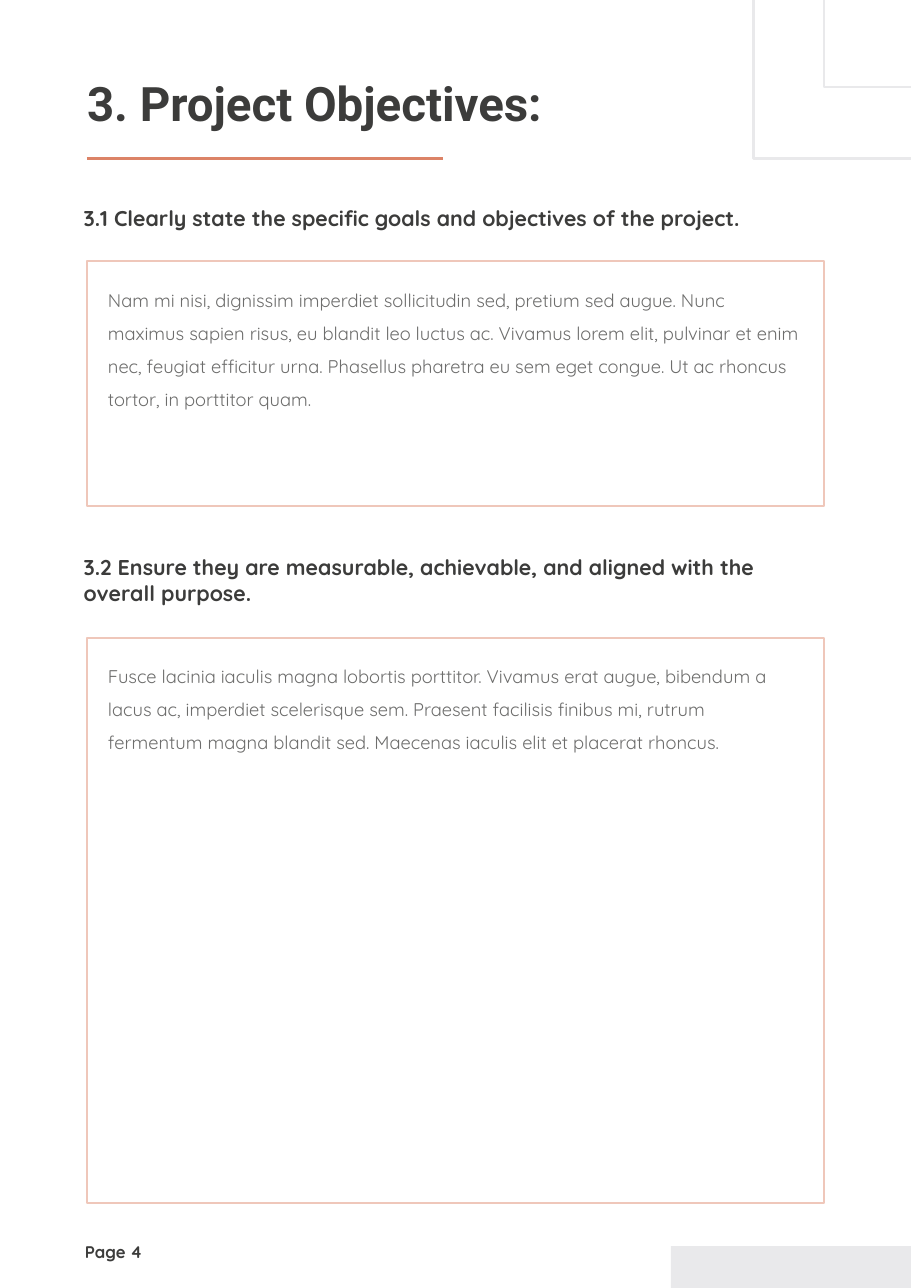
import pptx
import pptx.dml.color
import pptx.enum.shapes
import pptx.enum.text
import pptx.oxml
import pptx.oxml.ns
import pptx.util

EMU_PER_PX = 9144
INK, GREY, CORAL, BLUSH, MIST = "3C3C3B", "6D6D6C", "DC8367", "EFC7BA", "E9E9EB"


def px(length):
    return pptx.util.Emu(length * EMU_PER_PX)


def colour(value):
    return pptx.dml.color.RGBColor.from_string(value)


class ReportPage:
    """Draws styled elements on one report page, with lengths in px."""

    body_font = "Quicksand"
    title_font = "Roboto"

    def __init__(self, deck):
        self.page = deck.slides.add_slide(deck.slide_layouts[5])
        self.shapes = self.page.shapes

    def fill_text(self, box, lines, size, ink=INK, bold=True, font=body_font, spacing=1.0):
        frame = box.text_frame
        frame.word_wrap = True
        frame.auto_size = pptx.enum.text.MSO_AUTO_SIZE.NONE
        frame.vertical_anchor = pptx.enum.text.MSO_ANCHOR.TOP
        frame.margin_left = frame.margin_right = 0
        frame.margin_top = frame.margin_bottom = 0
        for index, line in enumerate(lines):
            para = frame.add_paragraph() if index else frame.paragraphs[0]
            para.alignment = pptx.enum.text.PP_ALIGN.LEFT
            para.line_spacing = spacing
            span = para.add_run()
            span.text = line
            span.font.name = font
            span.font.size = pptx.util.Pt(size)
            span.font.bold = bold
            span.font.color.rgb = colour(ink)

    def title(self, left, top, width, height, line):
        box = self.shapes.title
        box.left, box.top = px(left), px(top)
        box.width, box.height = px(width), px(height)
        self.fill_text(box, [line], 31, font=self.title_font)

    def text(self, left, top, width, height, lines, size, **style):
        box = self.shapes.add_textbox(px(left), px(top), px(width), px(height))
        self.fill_text(box, lines, size, **style)

    def outline(self, shape, value, weight=1.5):
        shape.line.color.rgb = colour(value)
        shape.line.width = pptx.util.Pt(weight)

    def rule(self, left, top, right):
        line = self.shapes.add_connector(
            pptx.enum.shapes.MSO_CONNECTOR.STRAIGHT,
            px(left), px(top), px(right), px(top))
        self.outline(line, CORAL, 2.25)
        effects = pptx.oxml.parse_xml(
            "<a:effectLst %s/>" % pptx.oxml.ns.nsdecls("a"))
        line._element.spPr.append(effects)

    def rectangle(self, left, top, width, height, fill=None, edge=None):
        shape = self.shapes.add_shape(
            pptx.enum.shapes.MSO_SHAPE.RECTANGLE,
            px(left), px(top), px(width), px(height))
        shape.shadow.inherit = False
        if fill:
            shape.fill.solid()
            shape.fill.fore_color.rgb = colour(fill)
        else:
            shape.fill.background()
        if edge:
            self.outline(shape, edge)
        else:
            shape.line.fill.background()

    def corner(self, left, bottom, right):
        builder = self.shapes.build_freeform(left, 0, scale=EMU_PER_PX)
        builder.add_line_segments([(left, bottom), (right, bottom)], close=False)
        shape = builder.convert_to_shape()
        shape.shadow.inherit = False
        shape.fill.background()
        self.outline(shape, MIST)

    def section(self, top, heading, frame_top, frame_height, answer):
        self.text(76, top, 672, 24 * len(heading), heading, 14)
        self.rectangle(79, frame_top, 669, frame_height, edge=BLUSH)
        self.text(98, frame_top + 15, 629, 111, [answer], 12,
                  ink=GREY, bold=False, spacing=1.5)


def main():
    deck = pptx.Presentation()
    deck.slide_width, deck.slide_height = px(827), px(1169)
    report = ReportPage(deck)
    report.title(79, 67, 576, 52, "3. Project Objectives:")
    report.rule(79, 144, 402)
    report.section(
        186, ["3.1 Clearly state the specific goals and objectives of the project."],
        237, 222,
        "Nam mi nisi, dignissim imperdiet sollicitudin sed, pretium sed augue. "
        "Nunc maximus sapien risus, eu blandit leo luctus ac. Vivamus lorem elit, "
        "pulvinar et enim nec, feugiat efficitur urna. Phasellus pharetra eu sem "
        "eget congue. Ut ac rhoncus tortor, in porttitor quam.")
    report.section(
        503, ["3.2 Ensure they are measurable, achievable, and aligned with the",
              "overall purpose."],
        579, 513,
        "Fusce lacinia iaculis magna lobortis porttitor. Vivamus erat augue, "
        "bibendum a lacus ac, imperdiet scelerisque sem. Praesent facilisis "
        "finibus mi, rutrum fermentum magna blandit sed. Maecenas iaculis elit "
        "et placerat rhoncus.")
    report.text(77, 1127, 139, 19, ["Page 4"], 11)
    report.rectangle(609, 1131, 218, 38, fill=MIST)
    for left, bottom in ((684, 144), (748, 79)):
        report.corner(left, bottom, 827)
    deck.save("out.pptx")


if __name__ == "__main__":
    main()
